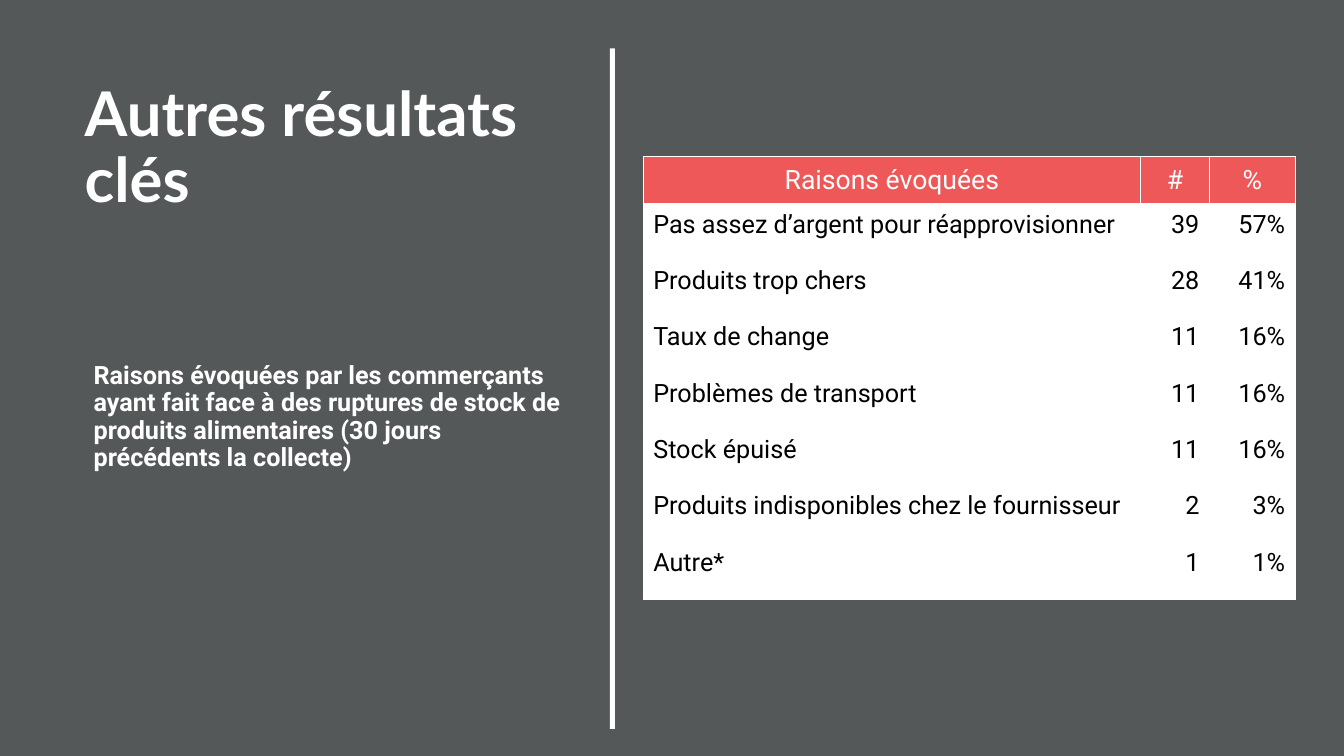
"""Build the slide on the reasons traders gave for food stock shortages."""
from lxml.etree import SubElement
from pptx import Presentation
from pptx.dml.color import RGBColor
from pptx.enum.shapes import MSO_SHAPE as Shape
from pptx.enum.text import MSO_ANCHOR as Anchor, MSO_AUTO_SIZE as AutoSize, PP_ALIGN as Align
from pptx.oxml.ns import qn
from pptx.util import Cm, Pt

GREY = RGBColor(0x55, 0x58, 0x59)
RED = RGBColor(0xEF, 0x58, 0x59)
WHITE = RGBColor(0xFF, 0xFF, 0xFF)
BLACK = RGBColor(0, 0, 0)

REASONS = [
    ("Raisons évoquées", "#", "%"),
    ("Pas assez d’argent pour réapprovisionner", "39", "57%"),
    ("Produits trop chers", "28", "41%"),
    ("Taux de change", "11", "16%"),
    ("Problèmes de transport", "11", "16%"),
    ("Stock épuisé", "11", "16%"),
    ("Produits indisponibles chez le fournisseur", "2", "3%"),
    ("Autre*", "1", "1%"),
]
COLUMN_WIDTHS = [12.53, 1.74, 2.16]
HEADER_HEIGHT, ROW_HEIGHT = 1.22, 1.42


def write_heading(box, text, font_name, size):
    frame = box.text_frame
    frame.word_wrap = True
    frame.auto_size = AutoSize.NONE
    frame.vertical_anchor = Anchor.TOP
    para = frame.paragraphs[0]
    para.text = text
    para.alignment = Align.LEFT
    para.line_spacing = 0.9
    para.font.name, para.font.size = font_name, Pt(size)
    para.font.bold = True
    para.font.color.rgb = WHITE


def add_borders(cell, widths):
    properties = cell._tc.get_or_add_tcPr()
    for side, width in zip("LRTB", widths):
        line = SubElement(properties, qn(f"a:ln{side}"), w=str(Pt(width)))
        fill = SubElement(line, qn("a:solidFill"))
        SubElement(fill, qn("a:srgbClr"), val=str(WHITE))


deck = Presentation()
deck.slide_width, deck.slide_height = Cm(33.87), Cm(19.05)
page = deck.slides.add_slide(deck.slide_layouts[5])
page.background.fill.solid()
page.background.fill.fore_color.rgb = GREY

divider = page.shapes.add_shape(Shape.RECTANGLE, Cm(15.37), Cm(1.22), Cm(0.13), Cm(17.15))
divider.shadow.inherit = False
divider.fill.solid()
divider.fill.fore_color.rgb = WHITE
divider.line.fill.background()

title = page.shapes.title
title.left, title.top, title.width, title.height = Cm(1.88), Cm(1.96), Cm(12.6), Cm(1.63)
write_heading(title, "Autres résultats clés", "Lato", 44)

subtitle = page.shapes.add_textbox(Cm(2.11), Cm(9.02), Cm(12.4), Cm(2.44))
write_heading(
    subtitle,
    "Raisons évoquées par les commerçants ayant fait face à des ruptures de stock "
    "de produits alimentaires (30 jours précédents la collecte)",
    "Roboto",
    18,
)

table_height = HEADER_HEIGHT + ROW_HEIGHT * (len(REASONS) - 1)
table = page.shapes.add_table(
    len(REASONS), len(COLUMN_WIDTHS),
    Cm(16.21), Cm(3.94), Cm(sum(COLUMN_WIDTHS)), Cm(table_height),
).table
for column, width in zip(table.columns, COLUMN_WIDTHS):
    column.width = Cm(width)

for row_index, reason in enumerate(REASONS):
    is_header = row_index == 0
    table.rows[row_index].height = Cm(HEADER_HEIGHT if is_header else ROW_HEIGHT)
    for column_index, text in enumerate(reason):
        cell = table.cell(row_index, column_index)
        add_borders(cell, (1, 1, 1, 3) if is_header else (1, 1, 3 if row_index == 1 else 1, 1))
        cell.fill.solid()
        cell.fill.fore_color.rgb = RED if is_header else WHITE
        cell.text = text
        para = cell.text_frame.paragraphs[0]
        para.font.name = "Roboto"
        para.font.size = Pt(19 if is_header else 18)
        para.font.bold = False
        para.font.color.rgb = WHITE if is_header else BLACK
        if is_header:
            cell.vertical_anchor = Anchor.MIDDLE
            cell.margin_left = cell.margin_right = Cm(0.2)
            cell.margin_top = cell.margin_bottom = Cm(0.1)
            para.alignment = Align.CENTER
        else:
            para.alignment = Align.RIGHT if column_index else Align.LEFT

deck.save("out.pptx")
